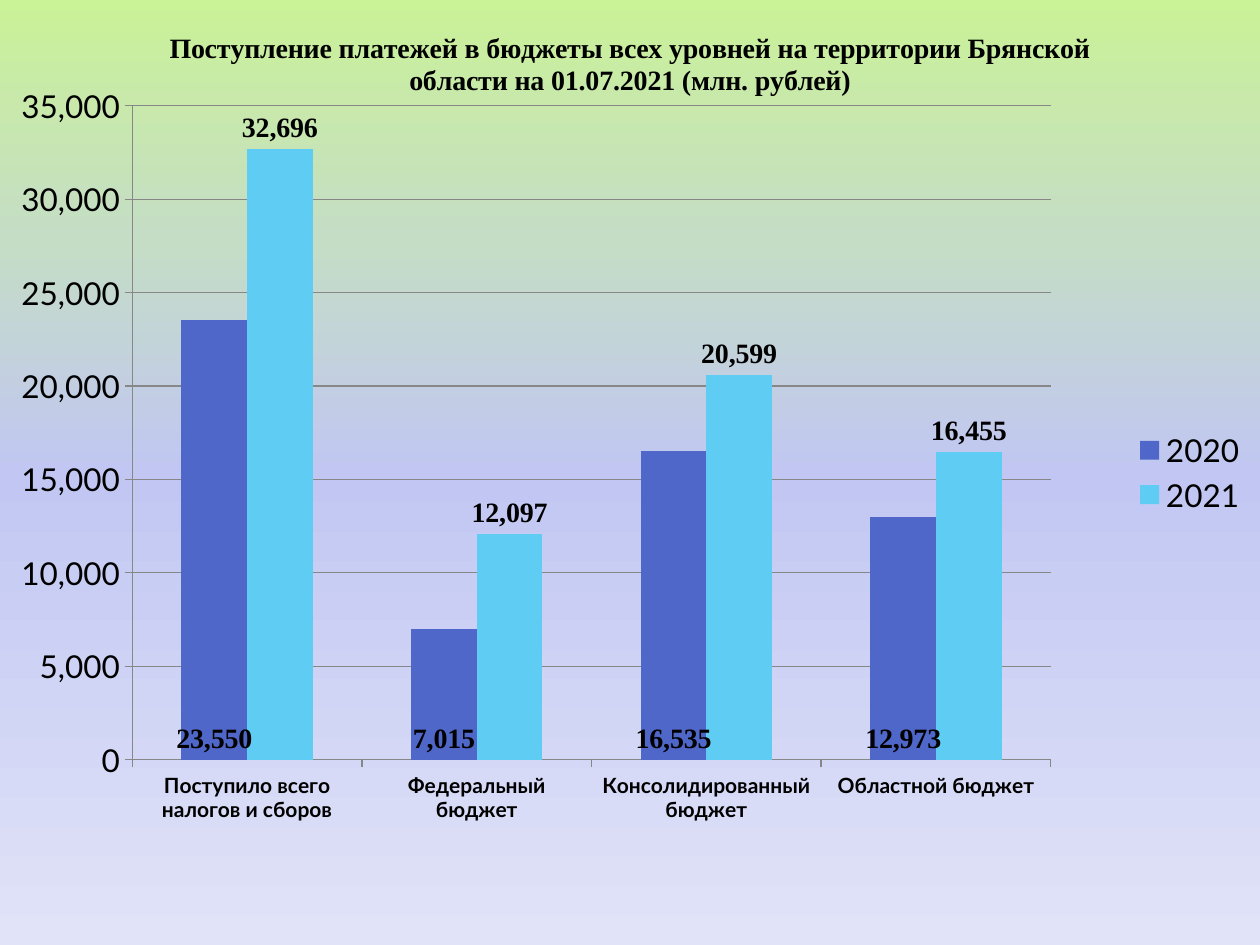
from lxml import etree
from pptx import Presentation
from pptx import util as u
from pptx.chart import data as chart_data
from pptx.dml import color
from pptx.enum import chart as ce
from pptx.oxml import parse_xml
from pptx.oxml.ns import nsdecls, qn

SERIF = "Times New Roman"
THOUSANDS = "#,##0"
GREY = "878787"
CATEGORIES = ["Поступило всего налогов и сборов", "Федеральный бюджет",
              "Консолидированный бюджет", "Областной бюджет"]
SERIES = [
    ("2020", [23550, 7015, 16535, 12973], "4E67C8", ce.XL_LABEL_POSITION.INSIDE_BASE),
    ("2021", [32696, 12097, 20599, 16455], "5ECCF3", ce.XL_LABEL_POSITION.OUTSIDE_END),
]
BACKDROP = [(0, "CAF297"), (25, "C5DDC5"), (50, "C1C7F2"), (100, "E1E3F8")]
PLOT = {"x": 0.105, "y": 0.112, "w": 0.729, "h": 0.692}


def rgb(value):
    return color.RGBColor.from_string(value)


def style_font(font, **values):
    font.color.rgb = rgb("000000")
    for name, value in values.items():
        setattr(font, name, value)


deck = Presentation()
deck.slide_width, deck.slide_height = u.Cm(25.4), u.Cm(19.05)
page = deck.slides.add_slide(deck.slide_layouts[6])

# Chart and its values
data = chart_data.CategoryChartData(number_format=THOUSANDS)
data.categories = CATEGORIES
for name, values, _, _ in SERIES:
    data.add_series(name, values)
chart = page.shapes.add_chart(
    ce.XL_CHART_TYPE.COLUMN_CLUSTERED, u.Cm(0), u.Cm(0),
    deck.slide_width, deck.slide_height, data).chart
style_font(chart.font, name="Lato", size=u.Pt(18))

# Title and legend
chart.has_title = True
title = chart.chart_title
title.include_in_layout = False
para = title.text_frame.paragraphs[0]
span = para.add_run()
span.text = ("Поступление платежей в бюджеты всех уровней на территории "
             "Брянской области на 01.07.2021 (млн. рублей)")
style_font(span.font, name=SERIF, size=u.Pt(16), bold=True)
chart.has_legend = True
chart.legend.position = ce.XL_LEGEND_POSITION.RIGHT
chart.legend.include_in_layout = False

# Axes
category_axis, value_axis = chart.category_axis, chart.value_axis
value_axis.has_major_gridlines = True
for line in (category_axis.format.line, value_axis.format.line,
             value_axis.major_gridlines.format.line):
    line.color.rgb = rgb(GREY)
    line.width = u.Pt(0.75)
for axis in (category_axis, value_axis):
    axis.major_tick_mark = ce.XL_TICK_MARK.OUTSIDE
style_font(category_axis.tick_labels.font, name="Lato", size=u.Pt(12), bold=True)
value_axis.tick_labels.number_format = THOUSANDS
value_axis.tick_labels.number_format_is_linked = False
value_axis.minimum_scale, value_axis.maximum_scale = 0, 35000
value_axis.major_unit = 5000

# Columns and their labels
plot = chart.plots[0]
plot.gap_width, plot.overlap, plot.vary_by_categories = 150, 0, False
for series, (_, _, fill, position) in zip(plot.series, SERIES):
    series.format.fill.solid()
    series.format.fill.fore_color.rgb = rgb(fill)
    labels = series.data_labels
    label_format = {"show_value": True, "position": position,
                    "number_format": THOUSANDS, "number_format_is_linked": False}
    for name, value in label_format.items():
        setattr(labels, name, value)
    style_font(labels.font, name=SERIF, size=u.Pt(16), bold=True)

# Fixed inner plot area
plot_area = chart.element.chart.plotArea
for layout in plot_area.findall(qn("c:layout")):
    plot_area.remove(layout)
layout = etree.Element(qn("c:layout"))
manual = etree.SubElement(layout, qn("c:manualLayout"))
settings = {"layoutTarget": "inner", "xMode": "edge", "yMode": "edge", **PLOT}
for name, value in settings.items():
    etree.SubElement(manual, qn(f"c:{name}")).set("val", str(value))
plot_area.insert(0, layout)

# Gradient behind the whole chart
stops = "".join(f'<a:gs pos="{place * 1000}"><a:srgbClr val="{value}"/></a:gs>'
                for place, value in BACKDROP)
chart.element.chart.addnext(parse_xml(
    f'<c:spPr {nsdecls("c", "a")}><a:gradFill><a:gsLst>{stops}</a:gsLst>'
    '<a:lin ang="5400000" scaled="0"/></a:gradFill><a:ln><a:noFill/></a:ln></c:spPr>'))

deck.save("out.pptx")
